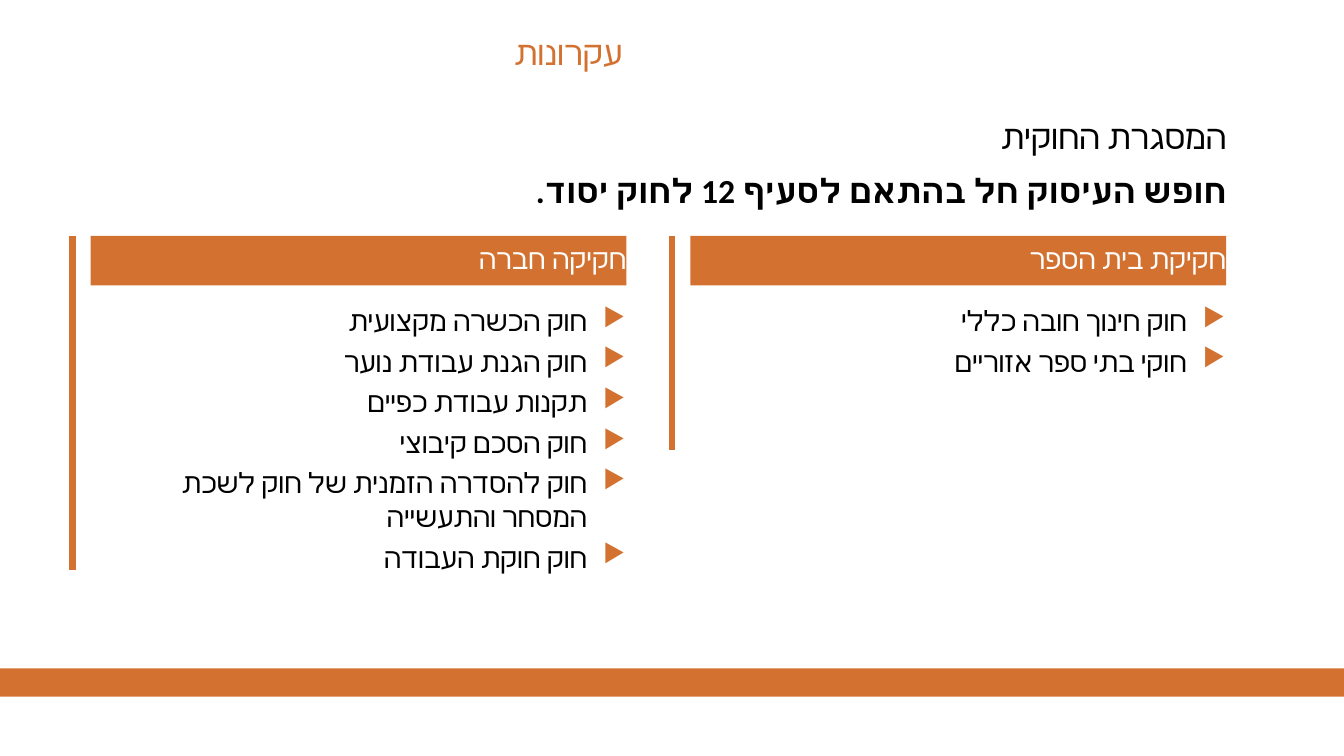
from dataclasses import dataclass

from lxml import etree
from pptx import Presentation
from pptx.dml.color import RGBColor
from pptx.enum.shapes import MSO_CONNECTOR, MSO_SHAPE
from pptx.enum.text import MSO_ANCHOR, PP_ALIGN
from pptx.oxml.ns import qn
from pptx.util import Pt

RIGHT, CENTER = PP_ALIGN.RIGHT, PP_ALIGN.CENTER
TOP, MIDDLE = MSO_ANCHOR.TOP, MSO_ANCHOR.MIDDLE
RECTANGLE = MSO_SHAPE.RECTANGLE
STRAIGHT = MSO_CONNECTOR.STRAIGHT


@dataclass(frozen=True)
class Theme:
    """Colours, type and shared measures of the slide."""
    accent: RGBColor = RGBColor(0xD3, 0x72, 0x30)
    ink: RGBColor = RGBColor(0, 0, 0)
    paper: RGBColor = RGBColor(255, 255, 255)
    font: str = "Calibri"
    large: int = 24
    medium: int = 20
    indent: int = 28


THEME = Theme()
COLUMNS = (
    (493.2, 480.24, 152.6, "חקיקת בית הספר", (
        "חוק חינוך חובה כללי",
        "חוקי בתי ספר אזוריים",
    )),
    (64.8, 51.84, 238.3, "חקיקה חברה", (
        "חוק הכשרה מקצועית",
        "חוק הגנת עבודת נוער",
        "תקנות עבודת כפיים",
        "חוק הסכם קיבוצי",
        "חוק להסדרה הזמנית של חוק לשכת המסחר והתעשייה",
        "חוק חוקת העבודה",
    )),
)


def prepare_frame(shape, anchor=TOP, left_inset=0):
    """Set wrapping, insets and anchor of a shape's text and return its frame."""
    frame = shape.text_frame
    frame.word_wrap = True
    frame.margin_left = Pt(left_inset)
    frame.margin_top = frame.margin_right = frame.margin_bottom = 0
    frame.vertical_anchor = anchor
    return frame


def add_bullet(properties):
    """Give a paragraph a hanging accent-coloured triangle."""
    properties.set("marL", str(Pt(THEME.indent)))
    properties.set("marR", "0")
    properties.set("indent", str(Pt(-THEME.indent)))
    color = etree.SubElement(properties, qn("a:buClr"))
    etree.SubElement(color, qn("a:srgbClr"), val=str(THEME.accent))
    etree.SubElement(properties, qn("a:buSzPct"), val="90000")
    etree.SubElement(properties, qn("a:buChar"), char="▶")


def write_lines(frame, lines, size, color, gap=0, align=RIGHT, rtl=True, bullet=False):
    """Write one paragraph per line and return the paragraphs."""
    paragraphs = []
    for index, line in enumerate(lines):
        para = frame.add_paragraph() if index else frame.paragraphs[0]
        para.text = line
        para.alignment = align
        para.space_before = Pt(gap if index else 0)
        properties = para._p.get_or_add_pPr()
        if rtl:
            properties.set("rtl", "1")
        if bullet:
            add_bullet(properties)
        para.font.size = Pt(size)
        para.font.color.rgb = color
        para.font.name = THEME.font
        etree.SubElement(properties.find(qn("a:defRPr")), qn("a:cs"), typeface=THEME.font)
        paragraphs.append(para)
    return paragraphs


def add_bar(page, left, top, width, height):
    """Add a plain accent rectangle."""
    bar = page.shapes.add_shape(RECTANGLE, Pt(left), Pt(top), Pt(width), Pt(height))
    bar.shadow.inherit = False
    bar.fill.solid()
    bar.fill.fore_color.rgb = THEME.accent
    bar.line.fill.background()
    return bar


def add_text(page, left, top, width, height):
    """Add a text box and return its frame."""
    return prepare_frame(page.shapes.add_textbox(Pt(left), Pt(top), Pt(width), Pt(height)))


def add_title(page, left, top, width, height):
    """Place the centred slide title."""
    frame = add_text(page, left, top, width, height)
    write_lines(frame, ["עקרונות"], THEME.large, THEME.accent, align=CENTER, rtl=False)


def add_introduction(page, left, top, width, height):
    """Place the subtitle and the bold statement beneath it."""
    frame = add_text(page, left, top, width, height)
    lines = ["המסגרת החוקית", "חופש העיסוק חל בהתאם לסעיף 12 לחוק יסוד."]
    statement = write_lines(frame, lines, THEME.large, THEME.ink, gap=10)[-1]
    statement.font.bold = True


def add_column(page, left, top, width, height, heading, laws):
    """Place a heading bar with its list of laws."""
    header_height, gap = 35.3, 13
    header = add_bar(page, left, top, width, header_height)
    frame = prepare_frame(header, MIDDLE, THEME.indent)
    write_lines(frame, [heading], THEME.medium, THEME.paper)[0].line_spacing = 0.9
    offset = header_height + gap
    body = add_text(page, left, top + offset, width, height - offset)
    write_lines(body, laws, THEME.medium, THEME.ink, gap=5, bullet=True)


def add_rule(page, left, top, height):
    """Draw the vertical rule beside a column."""
    rule = page.shapes.add_connector(STRAIGHT, Pt(left), Pt(top), Pt(left), Pt(top + height))
    rule.line.color.rgb = THEME.accent
    rule.line.width = Pt(4.5)
    etree.SubElement(rule._element.spPr, qn("a:effectLst"))


def main():
    """Build and save the slide."""
    deck = Presentation()
    deck.slide_width, deck.slide_height = Pt(960), Pt(540)
    page = deck.slides.add_slide(deck.slide_layouts[6])
    add_bar(page, 0, 477.4, 960, 20.2)
    add_introduction(page, 5.8, 82.8, 870.4, 79.2)
    add_title(page, 51.84, 23, 708.5, 35.3)
    top = 168.5
    for left, rule_left, rule_height, heading, laws in COLUMNS:
        add_column(page, left, top, 382.6, 254.2, heading, laws)
        add_rule(page, rule_left, top, rule_height)
    deck.save("out.pptx")


if __name__ == "__main__":
    main()
